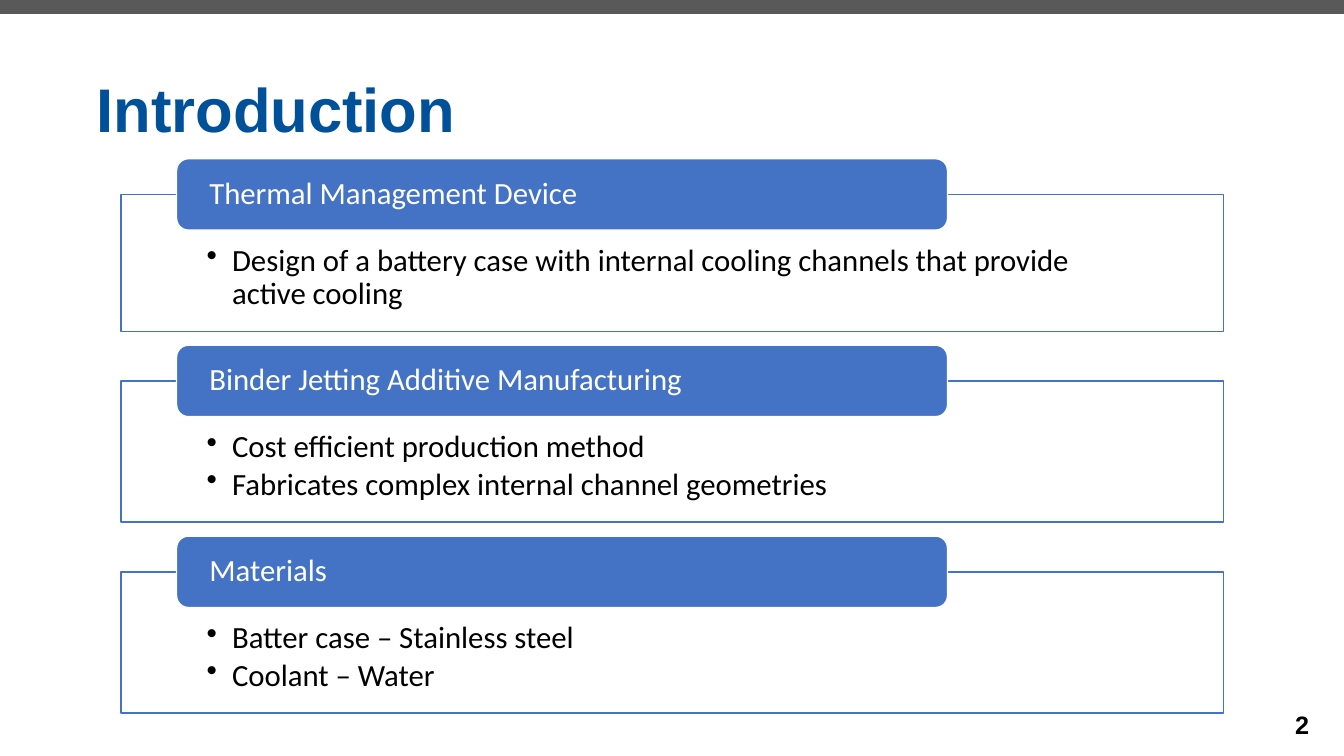
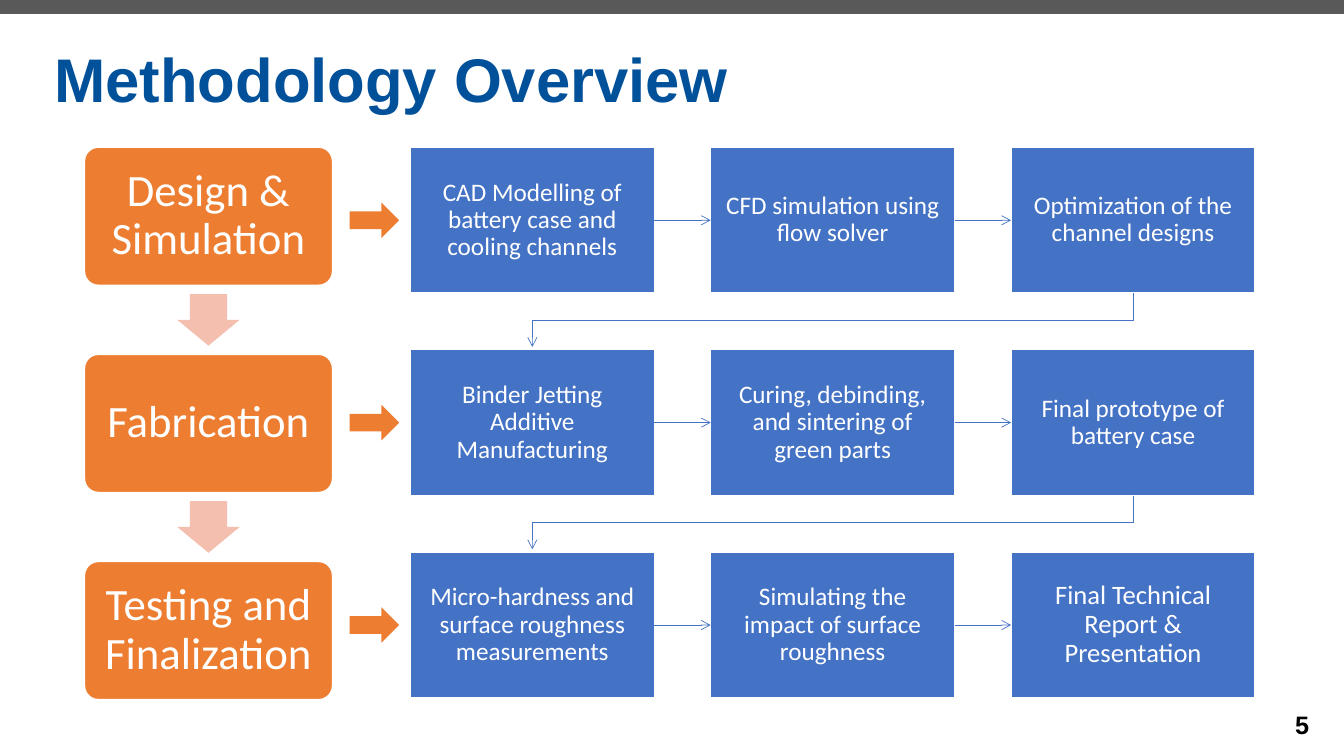
from lxml import etree
from pptx import Presentation
from pptx.dml.color import RGBColor
from pptx.enum.shapes import MSO_CONNECTOR, MSO_SHAPE
from pptx.enum.text import MSO_ANCHOR, PP_ALIGN
from pptx.oxml.ns import qn
from pptx.util import Cm, Pt

GREY = RGBColor(0x59, 0x59, 0x59)
NAVY = RGBColor(0x00, 0x50, 0x9A)
BLUE = RGBColor(0x44, 0x72, 0xC4)
ORANGE = RGBColor(0xED, 0x7D, 0x31)
PEACH = RGBColor(0xF4, 0xBF, 0xAE)
WHITE = RGBColor(0xFF, 0xFF, 0xFF)
BLACK = RGBColor(0x00, 0x00, 0x00)
WIDTH, HEIGHT = 33.87, 19.05


def write(shape, text, *, size, color=WHITE, font="Calibri", bold=False,
          align=PP_ALIGN.LEFT, anchor=MSO_ANCHOR.MIDDLE, spacing=0.9,
          after=0, bullet=False, margins=(0.25, 0.13, 0.25, 0.13)):
    """Fill a shape with text, one paragraph per line; margins run left, top, right, bottom."""
    frame = shape.text_frame
    frame.word_wrap = True
    frame.vertical_anchor = anchor
    (frame.margin_left, frame.margin_top,
     frame.margin_right, frame.margin_bottom) = map(Cm, margins)
    for index, line in enumerate(text.split("\n")):
        paragraph = frame.add_paragraph() if index else frame.paragraphs[0]
        paragraph.alignment = align
        paragraph.line_spacing = spacing
        paragraph.space_after = Pt(after)
        if bullet:
            properties = paragraph._p.get_or_add_pPr()
            properties.set("marL", str(Cm(0.64)))
            properties.set("indent", str(-Cm(0.64)))
            etree.SubElement(properties, qn("a:buChar")).set("char", "•")
        run = paragraph.add_run()
        run.text = line
        run.font.name = font
        run.font.size = Pt(size)
        run.font.bold = bold
        run.font.color.rgb = color


class Deck:
    """Shared style and the slide being built."""

    def __init__(self):
        self.presentation = Presentation()
        self.presentation.slide_width = Cm(WIDTH)
        self.presentation.slide_height = Cm(HEIGHT)
        self.shapes = None

    def start_slide(self, title, number, left, top):
        layout = self.presentation.slide_layouts[6]
        self.shapes = self.presentation.slides.add_slide(layout).shapes
        self.block(MSO_SHAPE.RECTANGLE, 0, 0, WIDTH, 0.35, GREY)
        self.label(title, left, top, 24.49, 2.13, size=44, color=NAVY)
        self.label(str(number), 32.39, 17.75, 0.94, 1.02, size=18, color=BLACK)

    def label(self, text, left, top, width, height, **style):
        box = self.shapes.add_textbox(Cm(left), Cm(top), Cm(width), Cm(height))
        write(box, text, font="Arial", bold=True, spacing=1.0,
              anchor=MSO_ANCHOR.TOP, **style)

    def block(self, kind, left, top, width, height, fill, line=None, adjust=()):
        shape = self.shapes.add_shape(kind, Cm(left), Cm(top), Cm(width), Cm(height))
        shape.shadow.inherit = False
        shape.fill.solid()
        shape.fill.fore_color.rgb = fill
        if line is None:
            shape.line.fill.background()
        else:
            shape.line.color.rgb = line
            shape.line.width = Pt(1)
        for index, value in enumerate(adjust):
            shape.adjustments[index] = value
        return shape

    def arrow(self, kind, *ends):
        connector = self.shapes.add_connector(kind, *ends)
        connector.line.color.rgb = BLUE
        connector.line.width = Pt(0.5)
        outline = connector.line._get_or_add_ln()
        etree.SubElement(outline, qn("a:tailEnd")).set("type", "arrow")
        etree.SubElement(connector._element.spPr, qn("a:effectLst"))
        return connector

    def join_across(self, source, target):
        connector = self.arrow(MSO_CONNECTOR.STRAIGHT, 0, 0, 0, 0)
        connector.begin_connect(source, 3)
        connector.end_connect(target, 1)

    def join_rows(self, source, target):
        """Elbow from the bottom of source down and left to the top of target."""
        start_x, start_y = source.left + source.width // 2, source.top + source.height
        end_x, end_y = target.left + target.width // 2, target.top - Cm(0.07)
        # A quarter turn makes the elbow leave and arrive vertically
        middle_x, middle_y = (start_x + end_x) // 2, (start_y + end_y) // 2
        half_drop, half_run = (end_y - start_y) // 2, (start_x - end_x) // 2
        connector = self.arrow(MSO_CONNECTOR.ELBOW,
                               middle_x - half_drop, middle_y - half_run,
                               middle_x + half_drop, middle_y + half_run)
        connector._element.spPr.find(qn("a:xfrm")).set("rot", "5400000")


def build_introduction(deck):
    deck.start_slide("Introduction", 2, 2.18, 1.65)
    topics = [
        ("Thermal Management Device", 3.45,
         "Design of a battery case with internal cooling channels that provide active cooling"),
        ("Binder Jetting Additive Manufacturing", 3.56,
         "Cost efficient production method\nFabricates complex internal channel geometries"),
        ("Materials", 3.56, "Batter case – Stainless steel\nCoolant – Water"),
    ]
    top, gap, heading_height = 4.9, 1.25, 1.8
    for heading, height, points in topics:
        panel = deck.block(MSO_SHAPE.RECTANGLE, 3.05, top, 27.79, height, WHITE, BLUE)
        write(panel, points, size=22, color=BLACK, anchor=MSO_ANCHOR.TOP, after=3,
              bullet=True, margins=(2.16, 1.27, 2.16, 0.43))
        tab = deck.block(MSO_SHAPE.ROUNDED_RECTANGLE, 4.45, top - heading_height / 2,
                         19.43, heading_height, BLUE, WHITE)
        write(tab, heading, size=22, margins=(0.74, 0, 0.74, 0))
        top += height + gap


def build_methodology(deck):
    deck.start_slide("Methodology Overview", 5, 1.12, 0.89)
    phases = [
        ("Design & Simulation", ["CAD Modelling of battery case and cooling channels",
                                 "CFD simulation using flow solver",
                                 "Optimization of the channel designs"]),
        ("Fabrication", ["Binder Jetting Additive Manufacturing",
                         "Curing, debinding, and sintering of green parts",
                         "Final prototype of battery case"]),
        ("Testing and Finalization", ["Micro-hardness and surface roughness measurements",
                                      "Simulating the impact of surface roughness",
                                      "Final Technical Report & Presentation"]),
    ]
    top = 3.71
    phase_left, phase_width, phase_height, phase_pitch = 2.13, 6.25, 3.48, 5.22
    step_left, step_width, step_height = 10.34, 6.15, 3.68
    column_pitch, row_pitch = 7.57, 5.1
    down_width, down_height = 1.57, 1.3
    link_height = 0.89
    previous = None

    for row, (phase, steps) in enumerate(phases):
        # Phase, with an arrow down from the phase above
        phase_top = top + row * phase_pitch
        if row:
            gap = phase_pitch - phase_height
            deck.block(MSO_SHAPE.DOWN_ARROW, phase_left + (phase_width - down_width) / 2,
                       phase_top - (gap + down_height) / 2, down_width, down_height,
                       PEACH, adjust=(0.6, 0.5))
        stage = deck.block(MSO_SHAPE.ROUNDED_RECTANGLE, phase_left, phase_top,
                           phase_width, phase_height, ORANGE, WHITE, adjust=(0.1,))
        write(stage, phase, size=32, align=PP_ALIGN.CENTER, margins=(0.33,) * 4)

        # Arrow from the phase to its steps
        step_top = top + row * row_pitch
        deck.block(MSO_SHAPE.RIGHT_ARROW, 8.81, step_top + (step_height - link_height) / 2,
                   1.25, link_height, ORANGE)

        # Steps, each joined to the one before
        for column, step in enumerate(steps):
            last = row == len(phases) - 1 and column == len(steps) - 1
            box = deck.block(MSO_SHAPE.RECTANGLE, step_left + column * column_pitch,
                             step_top, step_width, step_height, BLUE, WHITE)
            write(box, step, size=19 if last else 18, align=PP_ALIGN.CENTER,
                  margins=(0.36,) * 4)
            if column:
                deck.join_across(previous, box)
            elif row:
                deck.join_rows(previous, box)
            previous = box


def main():
    deck = Deck()
    build_introduction(deck)
    build_methodology(deck)
    deck.presentation.save("out.pptx")


if __name__ == "__main__":
    main()
